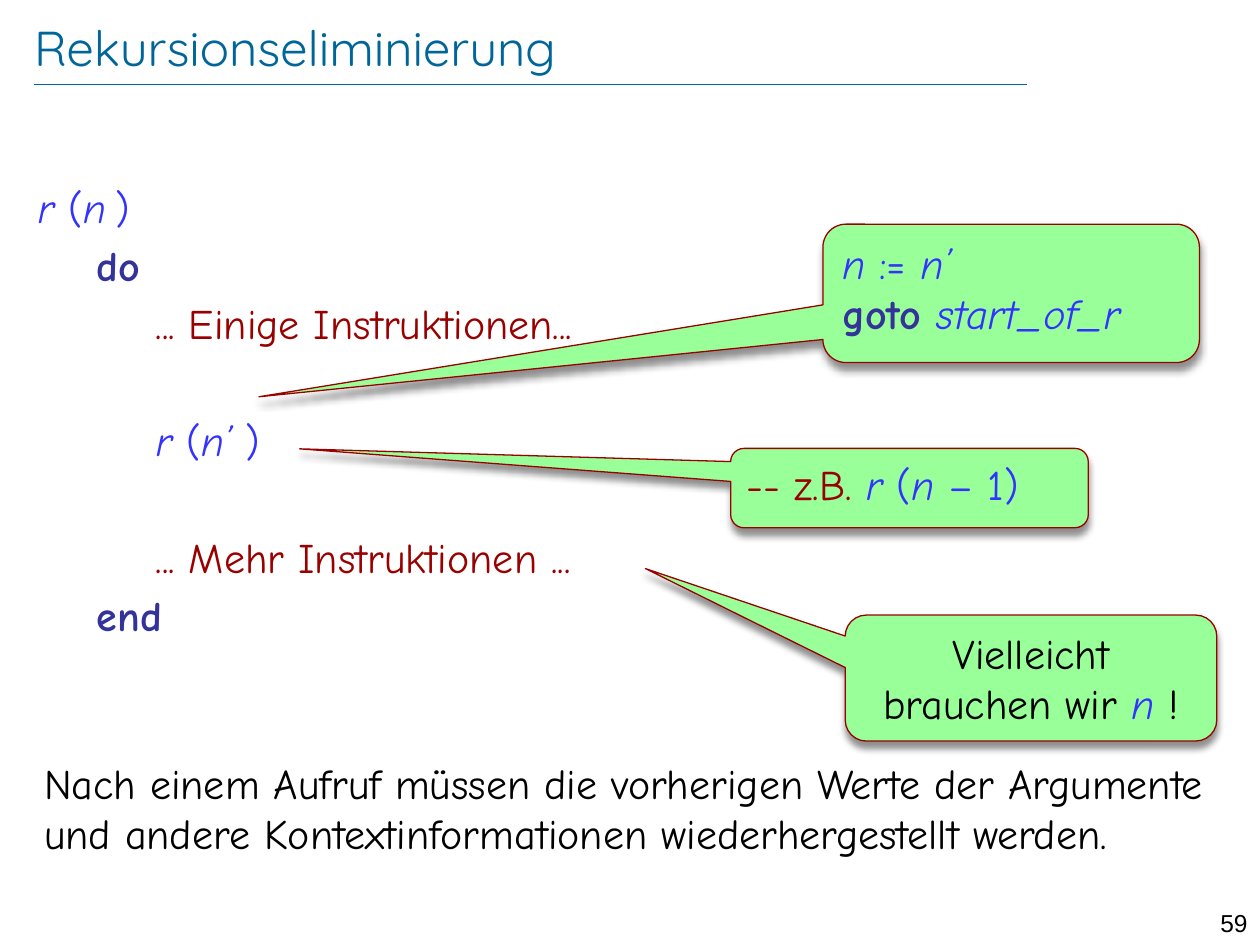
from dataclasses import dataclass
from typing import NamedTuple

from lxml import etree
from pptx import Presentation
from pptx.dml.color import RGBColor
from pptx.enum.shapes import MSO_CONNECTOR as Connector, MSO_SHAPE as Preset
from pptx.enum.text import MSO_ANCHOR as Anchor, PP_ALIGN as Align
from pptx.oxml.ns import qn
from pptx.util import Cm, Pt


@dataclass(frozen=True)
class Theme:
    heading: str = "006699"
    plain: str = "000000"
    code: str = "3333FF"
    keyword: str = "333399"
    comment: str = "990000"
    bubble: str = "99FF99"
    title_font: str = "Quicksand"
    text_font: str = "Comic Neue"
    number_font: str = "Arial"
    title_size: float = 28
    text_size: float = 24
    small_size: float = 16
    number_size: float = 14
    line_gap: float = 4.5
    blank_line: float = 29
    rule_width: float = 0.25
    bubble_line: float = 0.75


THEME = Theme()


class Span(NamedTuple):
    text: str
    color: str = THEME.code
    italic: bool = False
    bold: bool = False
    size: float = THEME.text_size
    font: str = THEME.text_font


class Line(NamedTuple):
    spans: list[Span]
    level: int = 0
    blank_before: bool = False
    align: Align = Align.LEFT


class Area(NamedTuple):
    left: float
    top: float
    width: float
    height: float

    def lengths(self) -> list[Cm]:
        return [Cm(value) for value in self]


class Callout(NamedTuple):
    area: Area
    tip: tuple[float, float]
    lines: list[Line]


def variable(text: str, size: float = THEME.text_size) -> Span:
    return Span(text, italic=True, size=size)


def keyword(text: str) -> Span:
    return Span(text, THEME.keyword, bold=True)


def comment(text: str) -> Span:
    return Span(text, THEME.comment)


def plain(text: str) -> Span:
    return Span(text, THEME.plain)


def color(value: str) -> RGBColor:
    return RGBColor.from_string(value)


def write_lines(frame, lines: list[Line], gap: float = 0) -> None:
    frame.word_wrap = True
    for index, line in enumerate(lines):
        para = frame.add_paragraph() if index else frame.paragraphs[0]
        para.alignment = line.align
        if index:
            extra = THEME.blank_line + gap if line.blank_before else 0
            para.space_before = Pt(gap + extra)
        if line.level:
            para._p.get_or_add_pPr().set("marL", str(Cm(1.19 * line.level)))
        for span in line.spans:
            run = para.add_run()
            run.text = span.text
            run.font.name = span.font
            run.font.size = Pt(span.size)
            run.font.bold = span.bold
            run.font.italic = span.italic
            run.font.color.rgb = color(span.color)


def add_text(page, area: Area, lines: list[Line], gap: float = 0):
    box = page.shapes.add_textbox(*area.lengths())
    write_lines(box.text_frame, lines, gap)
    return box


def add_title(page, text: str) -> None:
    title = Span(text, THEME.heading, size=THEME.title_size, font=THEME.title_font)
    frame = add_text(page, Area(0.69, 0.33, 22.07, 1.22), [Line([title])]).text_frame
    frame.margin_left = frame.margin_right = frame.margin_top = frame.margin_bottom = 0
    frame.vertical_anchor = Anchor.MIDDLE


def add_rule(page, left: float, right: float, top: float) -> None:
    rule = page.shapes.add_connector(
        Connector.STRAIGHT, Cm(left), Cm(top), Cm(right), Cm(top))
    rule.line.color.rgb = color(THEME.heading)
    rule.line.width = Pt(THEME.rule_width)
    etree.SubElement(rule._element.spPr, qn("a:effectLst"))


def add_shadow(shape) -> None:
    effects = etree.SubElement(shape._element.spPr, qn("a:effectLst"))
    shadow = etree.SubElement(
        effects, qn("a:outerShdw"), blurRad=str(Pt(4)), dist=str(Pt(4)),
        dir="5400000", algn="ctr", rotWithShape="0")
    tint = etree.SubElement(shadow, qn("a:srgbClr"), val=THEME.plain)
    etree.SubElement(tint, qn("a:alpha"), val="43000")


def add_callout(page, callout: Callout) -> None:
    bubble = page.shapes.add_shape(
        Preset.ROUNDED_RECTANGULAR_CALLOUT, *callout.area.lengths())
    for index, value in enumerate((*callout.tip, 0.167)):
        bubble.adjustments[index] = value
    bubble.fill.solid()
    bubble.fill.fore_color.rgb = color(THEME.bubble)
    bubble.line.color.rgb = color(THEME.comment)
    bubble.line.width = Pt(THEME.bubble_line)
    add_shadow(bubble)
    bubble.text_frame.vertical_anchor = Anchor.TOP
    write_lines(bubble.text_frame, callout.lines)


ROUTINE = [
    Line([variable("r"), Span(" ("), variable("n"),
          variable(" ", THEME.small_size), Span(")")]),
    Line([keyword("do")], level=1),
    Line([comment("... Einige Instruktionen...")], level=2),
    Line([variable("r"), Span(" ("), variable("n’ "), Span(")")],
         level=2, blank_before=True),
    Line([comment("... Mehr Instruktionen ...")], level=2, blank_before=True),
    Line([keyword("end")], level=1),
]

CALLOUTS = [
    Callout(Area(17.04, 12.4, 7.49, 2.54), (-1.038, -0.869), [
        Line([plain("Vielleicht brauchen wir "), variable("n "), plain("!")],
             align=Align.CENTER)]),
    Callout(Area(16.59, 4.52, 7.59, 2.79), (-1.998, 0.747), [
        Line([variable("n "), Span(":= "), variable("n’")]),
        Line([keyword("goto "), variable("start_of_r")])]),
    Callout(Area(14.73, 9.04, 7.21, 1.6), (-1.705, -0.494), [
        Line([comment("-- z.B. "), variable("r "), Span("("),
              variable("n "), Span("– 1)")])]),
]

CONCLUSION = ("Nach einem Aufruf müssen die vorherigen Werte der Argumente "
              "und andere Kontextinformationen wiederhergestellt werden.")


def main() -> None:
    deck = Presentation()
    deck.slide_width, deck.slide_height = Cm(25.4), Cm(19.05)
    page = deck.slides.add_slide(deck.slide_layouts[6])
    add_rule(page, 0.69, 20.7, 1.7)
    number = Span("59", THEME.plain, size=THEME.number_size, font=THEME.number_font)
    add_text(page, Area(24, 18.19, 1.4, 0.61), [Line([number], align=Align.RIGHT)])
    add_title(page, "Rekursionseliminierung")
    add_text(page, Area(0.51, 3.53, 24.21, 10.21), ROUTINE, THEME.line_gap)
    for callout in CALLOUTS:
        add_callout(page, callout)
    add_text(page, Area(0.64, 15.14, 24.21, 2.77), [Line([plain(CONCLUSION)])])
    deck.save("out.pptx")


if __name__ == "__main__":
    main()
